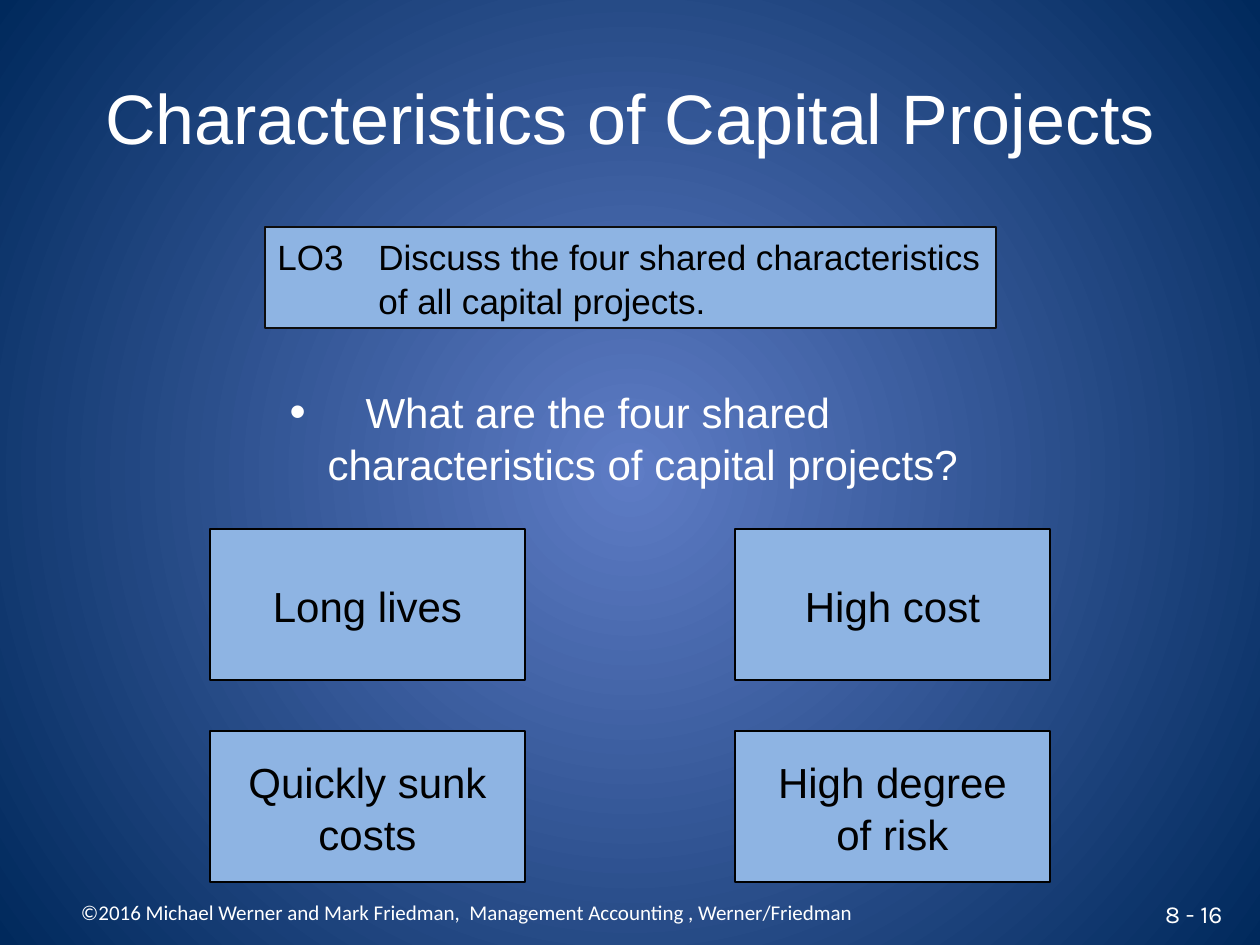
from lxml import etree
from pptx import Presentation, util as u
from pptx.dml.color import RGBColor
from pptx.enum import shapes, text
from pptx.oxml import ns

PX = 914400 // 126
AL = text.PP_ALIGN
MIDDLE = text.MSO_ANCHOR.MIDDLE


def color(value):
    return RGBColor.from_string(value)


def write(sp, lines, size, ink, align=AL.LEFT, font="Arial", spacing=1.0):
    tf = sp.text_frame
    tf.word_wrap = True
    for i, line in enumerate(lines):
        p = tf.paragraphs[0] if i == 0 else tf.add_paragraph()
        p.alignment = align
        p.line_spacing = spacing
        p.space_before = u.Pt(0)
        r = p.add_run()
        r.text = line
        r.font.size = u.Pt(size)
        r.font.name = font
        r.font.color.rgb = color(ink)
    return tf


prs = Presentation()
prs.slide_width, prs.slide_height = 1260 * PX, 945 * PX
s = prs.slides.add_slide(prs.slide_layouts[1])

fill = s.background.fill
fill.gradient()
for stop, value in zip(fill.gradient_stops, ("5E7CC5", "00295C")):
    stop.color.rgb = color(value)
grad = s.background._cSld.find(".//" + ns.qn("a:gradFill"))
grad.remove(grad.find(ns.qn("a:lin")))
path = etree.SubElement(grad, ns.qn("a:path"), path="circle")
etree.SubElement(path, ns.qn("a:fillToRect"), l="50000", t="50000", r="50000", b="50000")

title = s.shapes.title
title.left, title.top, title.width, title.height = 63 * PX, 38 * PX, 1134 * PX, 158 * PX
tf = write(title, ["Characteristics of Capital Projects"], 40, "FFFFFF", AL.CENTER)
tf.vertical_anchor = MIDDLE

body = s.placeholders[1]
body.left, body.top, body.width, body.height = 277 * PX, 378 * PX, 706 * PX, 113 * PX
question = ["What are the four shared", "characteristics of capital projects?"]
tf = write(body, question, 24, "FFFFFF", spacing=1.04)
first, second = [p._p.get_or_add_pPr() for p in tf.paragraphs]
first.set("marL", str(76 * PX))
first.set("indent", str(-76 * PX))
bullet_color = etree.SubElement(first, ns.qn("a:buClr"))
etree.SubElement(bullet_color, ns.qn("a:srgbClr"), val="FFFFFF")
etree.SubElement(first, ns.qn("a:buSzPct"), val="110000")
etree.SubElement(first, ns.qn("a:buFont"), typeface="Arial")
etree.SubElement(first, ns.qn("a:buChar"), char="•")
second.set("marL", str(38 * PX))
second.set("indent", "0")
etree.SubElement(second, ns.qn("a:buNone"))

objective = ["LO3\tDiscuss the four shared characteristics", "of all capital projects."]
boxes = [
    (265, 227, 731, 101, objective, 20, AL.LEFT, "0D0D0D"),
]
traits = [["Long lives"], ["High cost"], ["Quickly sunk", "costs"], ["High degree", "of risk"]]
for i, lines in enumerate(traits):
    row, col = divmod(i, 2)
    boxes.append((210 + 525 * col, 529 + 202 * row, 315, 151, lines, 24, AL.CENTER, "000000"))

for x, y, w, h, lines, size, align, edge in boxes:
    sp = s.shapes.add_shape(shapes.MSO_SHAPE.RECTANGLE, x * PX, y * PX, w * PX, h * PX)
    sp.shadow.inherit = False
    sp.fill.solid()
    sp.fill.fore_color.rgb = color("8EB4E3")
    sp.line.color.rgb = color(edge)
    sp.line.width = u.Pt(1)
    tf = write(sp, lines, size, "000000", align, spacing=1.04)
    tf.vertical_anchor = MIDDLE
    if lines is objective:
        tf.margin_right = 0
        for p, indent in zip(tf.paragraphs, (-101, 0)):
            pPr = p._p.get_or_add_pPr()
            pPr.set("marL", str(101 * PX))
            pPr.set("indent", str(indent * PX))

credit = "©2016 Michael Werner and Mark Friedman,  Management Accounting , Werner/Friedman"
footers = [
    (63, 879, 945, 66, credit, 12, AL.LEFT, "Calibri"),
    (1134, 895, 101, 38, "8 - 16", 14, AL.RIGHT, "Karla"),
]
for x, y, w, h, line, size, align, font in footers:
    sp = s.shapes.add_textbox(x * PX, y * PX, w * PX, h * PX)
    tf = write(sp, [line], size, "FFFFFF", align, font)
    tf.vertical_anchor = MIDDLE
    if align == AL.LEFT:
        tf.margin_left = 18 * PX

prs.save("out.pptx")
